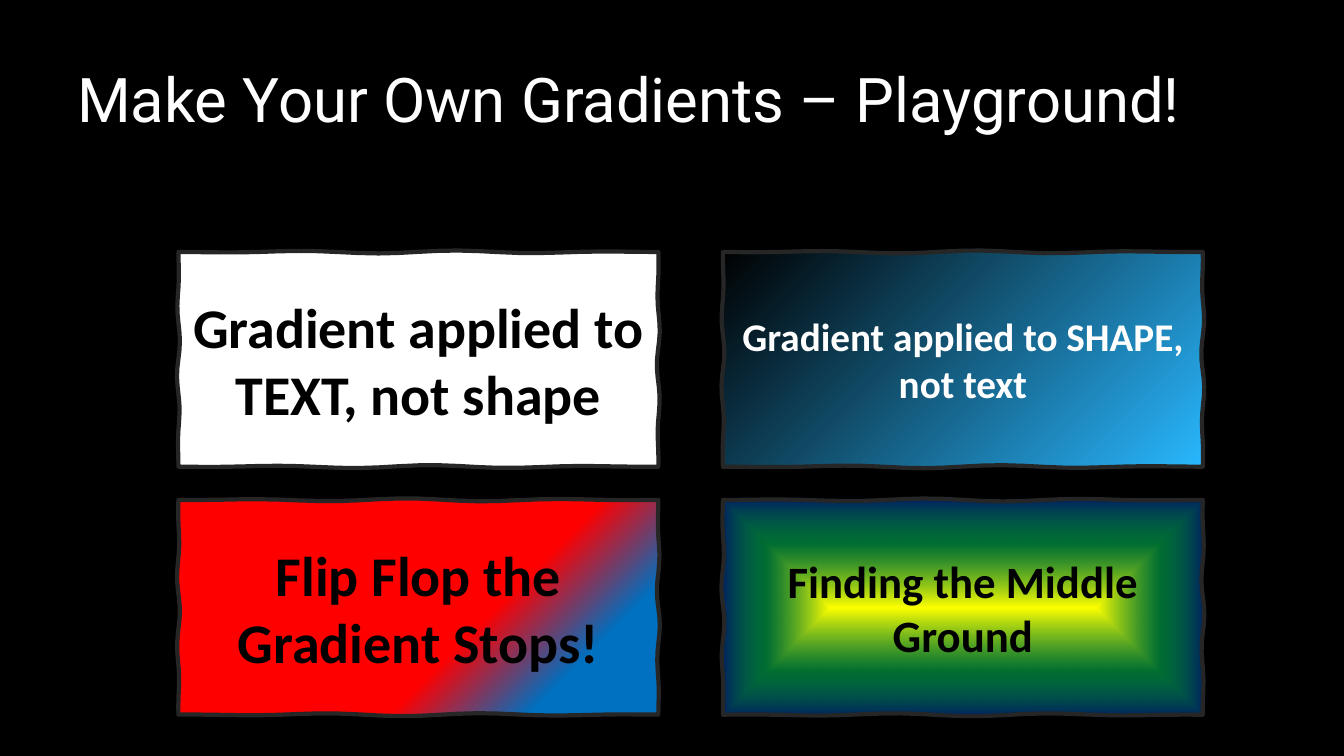
from math import sin
from lxml import etree
from pptx import Presentation
from pptx.dml.color import RGBColor
from pptx.enum.text import MSO_ANCHOR, MSO_AUTO_SIZE, PP_ALIGN
from pptx.oxml.ns import qn
from pptx.util import Inches, Pt

MIDDLE, CENTER, NO_FIT = MSO_ANCHOR.MIDDLE, PP_ALIGN.CENTER, MSO_AUTO_SIZE.NONE
BLACK = RGBColor(0x00, 0x00, 0x00)
WHITE = RGBColor(0xFF, 0xFF, 0xFF)
EDGE = RGBColor(0x26, 0x26, 0x26)
SKY = RGBColor(0x29, 0xB8, 0xFF)
BLUE = RGBColor(0x00, 0x70, 0xC0)
RED = RGBColor(0xFF, 0x00, 0x00)
YELLOW = RGBColor(0xFF, 0xFF, 0x00)
GREEN = RGBColor(0x00, 0xB0, 0x50)
NAVY = RGBColor(0x00, 0x20, 0x60)

# Gradients: stops as (percent, colour, opacity), angle or None for a rectangle
DUSK = {"stops": [(0, BLACK, 100), (100, SKY, 100)], "angle": 45}
FLIP = {"stops": [(19, BLUE, 100), (39, RED, 100)], "angle": 225}
GLOW = {"stops": [(0, YELLOW, 100), (59, GREEN, 62), (100, NAVY, 100)], "angle": None}

# Text, size, text colour, card fill; in reading order
CARDS = [
    ("Gradient applied to TEXT, not shape", 40, DUSK, WHITE),
    ("Gradient applied to SHAPE, not text", 28, WHITE, DUSK),
    ("Flip Flop the Gradient Stops!", 40, BLACK, FLIP),
    ("Finding the Middle Ground", 32, BLACK, GLOW),
]
LEFT, TOP, WIDE, HIGH = 1.77, 2.5, 4.76, 2.13
COL_STEP, ROW_STEP = 5.4, 2.46
STEPS, WOBBLE = 24, 0.015


def apply(item, values):
    for name, value in values.items():
        setattr(item, name, value)


def add(parent, tag, **attrs):
    return etree.SubElement(parent, qn(tag), {k: str(v) for k, v in attrs.items()})


def paint(fill, owner, look):
    """Fill with a plain colour or a gradient; owner is the XML element that holds the fill."""
    if isinstance(look, RGBColor):
        fill.solid()
        fill.fore_color.rgb = look
        return
    fill.gradient()
    grad = owner.find(qn("a:gradFill"))
    for child in list(grad):
        grad.remove(child)
    stops = add(grad, "a:gsLst")
    for place, color, alpha in look["stops"]:
        stop = add(stops, "a:gs", pos=place * 1000)
        tint = add(stop, "a:srgbClr", val=color)
        if alpha < 100:
            add(tint, "a:alpha", val=alpha * 1000)
    if look["angle"] is None:
        ring = add(grad, "a:path", path="rect")
        add(ring, "a:fillToRect", l=50000, t=50000, r=50000, b=50000)
    else:
        add(grad, "a:lin", ang=look["angle"] * 60000, scaled=0)


def write(frame, text, font, look):
    apply(frame, {"word_wrap": True, "auto_size": NO_FIT, "vertical_anchor": MIDDLE})
    para = frame.paragraphs[0]
    para.alignment = CENTER
    run = para.add_run()
    run.text = text
    apply(run.font, font)
    paint(run.font.fill, run._r.get_or_add_rPr(), look)
    return para


def outline(x, y, wide, high, seed):
    """Points round a box whose sides waver as if drawn by hand."""
    corners = [(x, y), (x + wide, y), (x + wide, y + high), (x, y + high)]
    points = []
    for side, (ax, ay) in enumerate(corners):
        bx, by = corners[(side + 1) % 4]
        for i in range(STEPS):
            part = i / STEPS
            shift = WOBBLE * sin(part * 19 + seed + side) * sin(part * 3.14)
            px, py = ax + (bx - ax) * part, ay + (by - ay) * part
            points.append((px, py + shift) if side % 2 == 0 else (px + shift, py))
    return [(Inches(px), Inches(py)) for px, py in points]


def add_card(slide, box, seed, text, size, ink, look):
    points = outline(*box, seed)
    pen = slide.shapes.build_freeform(*points[0])
    pen.add_line_segments(points[1:], close=True)
    card = pen.convert_to_shape()
    card.shadow.inherit = False
    paint(card.fill, card._element.spPr, look)
    card.line.color.rgb = EDGE
    card.line.width = Pt(3)
    write(card.text_frame, text, {"name": "Calibri", "size": Pt(size), "bold": True}, ink)


def add_title(slide, box, text):
    title = slide.shapes.title
    apply(title, dict(zip(("left", "top", "width", "height"), map(Inches, box))))
    para = write(title.text_frame, text, {"name": "Roboto", "size": Pt(44)}, WHITE)
    para.line_spacing = 0.9


def main():
    deck = Presentation()
    apply(deck, {"slide_width": Inches(13.33), "slide_height": Inches(7.5)})
    slide = deck.slides.add_slide(deck.slide_layouts.get_by_name("Title Only"))
    paint(slide.background.fill, None, BLACK)
    add_title(slide, (0.27, 0.17, 11.94, 1.7), "Make Your Own Gradients – Playground!")
    for i, card in enumerate(CARDS):
        row, col = divmod(i, 2)
        box = (LEFT + col * COL_STEP, TOP + row * ROW_STEP, WIDE, HIGH)
        add_card(slide, box, i, *card)
    deck.save("out.pptx")


if __name__ == "__main__":
    main()
